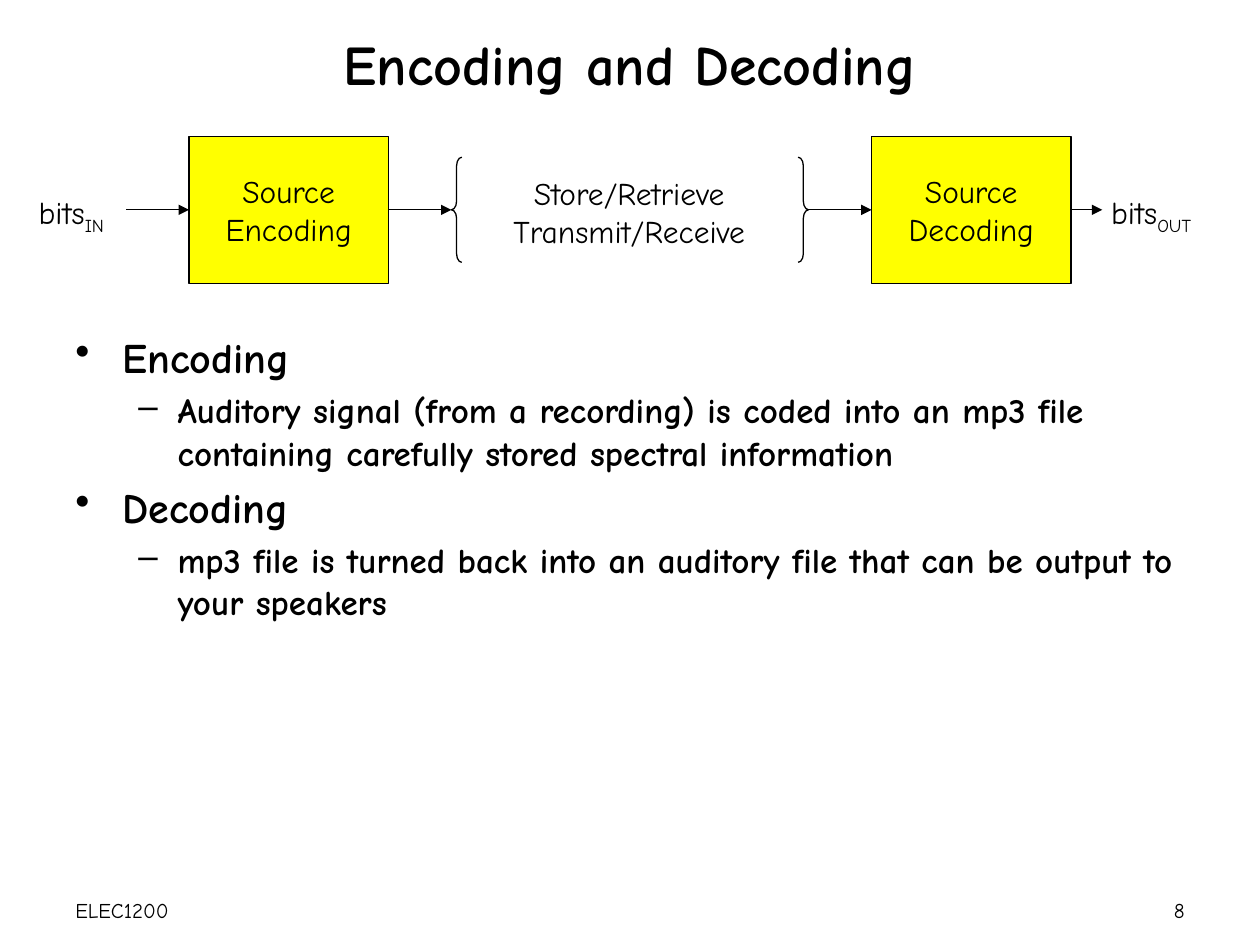
from dataclasses import dataclass
from typing import Optional

from lxml.etree import SubElement
from pptx import Presentation
from pptx.dml.color import RGBColor
from pptx.enum.shapes import MSO_CONNECTOR, MSO_SHAPE
from pptx.enum.text import MSO_ANCHOR, MSO_AUTO_SIZE, PP_ALIGN
from pptx.oxml.ns import qn
from pptx.util import Cm, Pt

FONT = "Comic Neue"
COLORS = {"ink": "000000", "block": "FFFF00"}
LINE_WIDTH = Pt(0.75)
FLOW_Y = 4.23
BLOCK_WIDTH, BLOCK_HEIGHT = 4.02, 2.96
BRACE_WIDTH, BRACE_HEIGHT = 0.21, 2.12
LEFT_SIDE, RIGHT_SIDE = 1, 3


@dataclass
class Span:
    text: str
    size: int = 18
    bold: bool = False
    subscript: bool = False


@dataclass
class Para:
    spans: list[Span]
    align: PP_ALIGN = PP_ALIGN.LEFT
    bullet: str = ""
    level: int = 0
    indent: float = 0
    hanging: float = 0


@dataclass
class TextBox:
    left: float
    top: float
    width: float
    height: float
    paras: list[Para]
    anchor: MSO_ANCHOR = MSO_ANCHOR.MIDDLE
    wrap: bool = True


@dataclass
class Block:
    left: float
    lines: list[str]


@dataclass
class Arrow:
    start: float
    end: float
    source: Optional[int] = None
    target: Optional[int] = None


def color(name: str) -> RGBColor:
    return RGBColor.from_string(COLORS[name])


def centered(lines: list[str]) -> list[Para]:
    return [Para([Span(line)], PP_ALIGN.CENTER) for line in lines]


def signal(direction: str) -> list[Para]:
    return [Para([Span("bits"), Span(direction, subscript=True)])]


def topic(text: str) -> Para:
    return Para([Span(text, 24, True)], bullet="•", indent=0.95, hanging=0.95)


def detail(text: str) -> Para:
    return Para([Span(text, 20, True)], bullet="–", level=1, indent=2.06, hanging=0.79)


def add_bullet(paragraph, para: Para) -> None:
    """Give the paragraph a hanging bullet and the space before it."""
    paragraph.level = para.level
    paragraph.space_before = Pt(0.2 * para.spans[0].size)
    properties = paragraph._p.get_or_add_pPr()
    properties.set("marL", str(Cm(para.indent)))
    properties.set("indent", str(-Cm(para.hanging)))
    SubElement(properties, qn("a:buChar")).set("char", para.bullet)


def write(frame, paras: list[Para], anchor: MSO_ANCHOR, wrap: bool) -> None:
    frame.word_wrap = wrap
    frame.vertical_anchor = anchor
    for index, para in enumerate(paras):
        paragraph = frame.add_paragraph() if index else frame.paragraphs[0]
        paragraph.alignment = para.align
        if para.bullet:
            add_bullet(paragraph, para)
        for span in para.spans:
            run = paragraph.add_run()
            run.text = span.text
            formats = {"name": FONT, "size": Pt(span.size), "bold": span.bold}
            for attribute, value in formats.items():
                setattr(run.font, attribute, value)
            run.font.color.rgb = color("ink")
            if span.subscript:
                run._r.get_or_add_rPr().set("baseline", "-25000")


def draw_text(page, item: TextBox) -> None:
    box = page.shapes.add_textbox(
        Cm(item.left), Cm(item.top), Cm(item.width), Cm(item.height))
    write(box.text_frame, item.paras, item.anchor, item.wrap)
    if not item.wrap:
        box.text_frame.auto_size = MSO_AUTO_SIZE.SHAPE_TO_FIT_TEXT


def draw_shape(page, kind: MSO_SHAPE, left: float, width: float, height: float):
    """Draw an outlined shape centred on the flow line."""
    shape = page.shapes.add_shape(
        kind, Cm(left), Cm(FLOW_Y - height / 2), Cm(width), Cm(height))
    shape.shadow.inherit = False
    shape.line.color.rgb = color("ink")
    shape.line.width = LINE_WIDTH
    return shape


def draw_block(page, block: Block):
    shape = draw_shape(page, MSO_SHAPE.RECTANGLE, block.left, BLOCK_WIDTH, BLOCK_HEIGHT)
    shape.fill.solid()
    shape.fill.fore_color.rgb = color("block")
    write(shape.text_frame, centered(block.lines), MSO_ANCHOR.MIDDLE, False)
    return shape


def draw_brace(page, kind: MSO_SHAPE, left: float) -> None:
    brace = draw_shape(page, kind, left, BRACE_WIDTH, BRACE_HEIGHT)
    brace.fill.background()
    brace.adjustments[0] = 0.83
    brace.adjustments[1] = 0.5


def draw_arrow(page, arrow: Arrow, blocks: list) -> None:
    connector = page.shapes.add_connector(
        MSO_CONNECTOR.STRAIGHT,
        Cm(arrow.start), Cm(FLOW_Y), Cm(arrow.end), Cm(FLOW_Y))
    if arrow.source is not None:
        connector.begin_connect(blocks[arrow.source], RIGHT_SIDE)
    if arrow.target is not None:
        connector.end_connect(blocks[arrow.target], LEFT_SIDE)
    connector.line.color.rgb = color("ink")
    connector.line.width = LINE_WIDTH
    SubElement(connector.line._get_or_add_ln(), qn("a:tailEnd")).set("type", "triangle")
    SubElement(connector._element.spPr, qn("a:effectLst"))


TEXTS = [
    TextBox(0, 0.43, 25.4, 1.7,
            [Para([Span("Encoding and Decoding", 32, True)], PP_ALIGN.CENTER)]),
    TextBox(1.27, 6.56, 22.86, 11.22, [
        topic("Encoding"),
        detail("Auditory signal (from a recording) is coded into an mp3 file "
               "containing carefully stored spectral information"),
        topic("Decoding"),
        detail("mp3 file is turned back into an auditory file that can be "
               "output to your speakers"),
    ], MSO_ANCHOR.TOP),
    TextBox(1.27, 17.83, 2.97, 1.02, [Para([Span("ELEC1200", 12)])]),
    TextBox(22.22, 17.83, 1.91, 1.02, [Para([Span("8", 12)], PP_ALIGN.RIGHT)]),
    TextBox(9.47, 3.38, 6.43, 1.96,
            centered(["Store/Retrieve", "Transmit/Receive"]), MSO_ANCHOR.TOP, False),
    TextBox(0.53, 3.76, 2.41, 1.09, signal("IN"), MSO_ANCHOR.TOP, False),
    TextBox(22.15, 3.76, 2.82, 1.09, signal("OUT"), MSO_ANCHOR.TOP, False),
]
BLOCKS = [Block(3.81, ["Source", "Encoding"]), Block(17.57, ["Source", "Decoding"])]
BRACES = [(MSO_SHAPE.LEFT_BRACE, 9.1), (MSO_SHAPE.RIGHT_BRACE, 16.09)]
ARROWS = [
    Arrow(2.54, 3.81, target=0),
    Arrow(7.83, 9.1, source=0),
    Arrow(16.3, 17.57, target=1),
    Arrow(21.59, 22.22, source=1),
]


def main() -> None:
    deck = Presentation()
    deck.slide_width, deck.slide_height = Cm(25.4), Cm(19.05)
    page = deck.slides.add_slide(deck.slide_layouts[6])
    blocks = [draw_block(page, block) for block in BLOCKS]
    for arrow in ARROWS:
        draw_arrow(page, arrow, blocks)
    for kind, left in BRACES:
        draw_brace(page, kind, left)
    for item in TEXTS:
        draw_text(page, item)
    deck.save("out.pptx")


if __name__ == "__main__":
    main()
